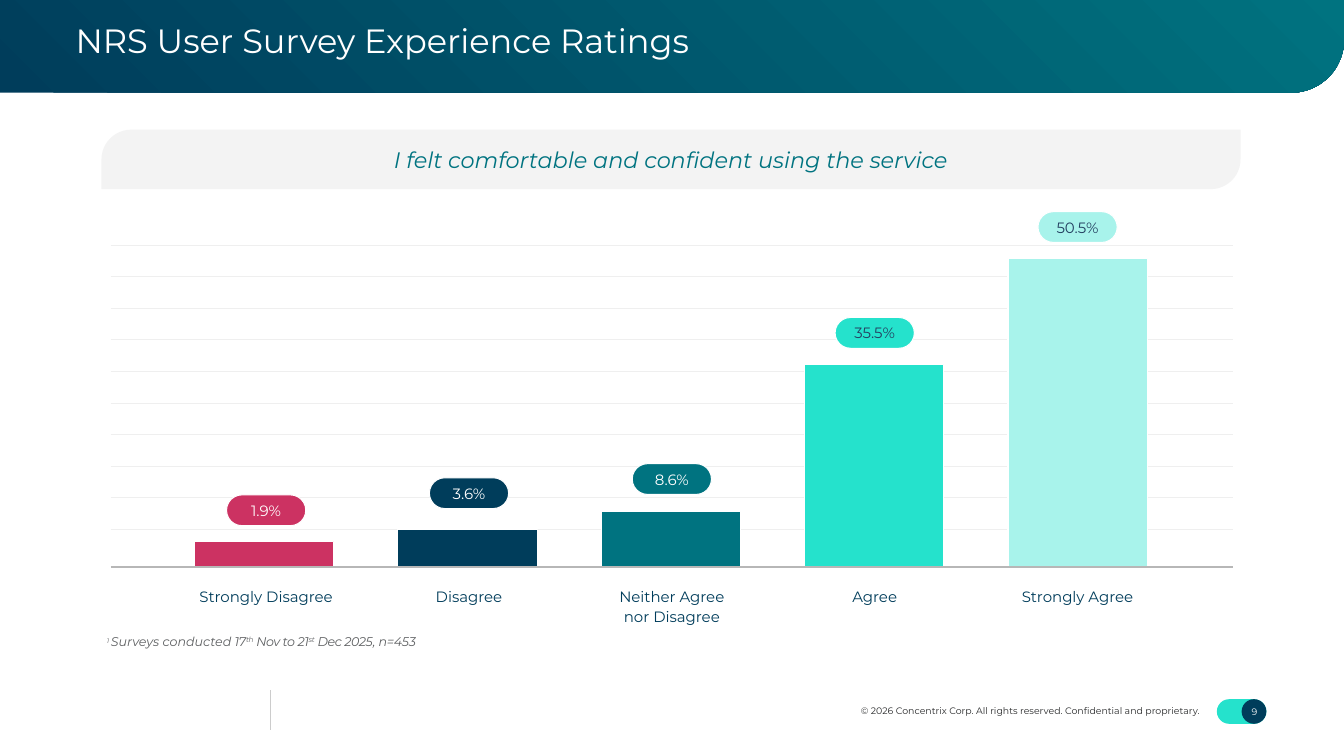
from pptx import Presentation
from pptx import util as u
from pptx.dml.color import RGBColor
from pptx.enum import shapes, text
from pptx.oxml.ns import qn
from lxml import etree

Pt = u.Pt
SHAPE = shapes.MSO_SHAPE
ALIGN = text.PP_ALIGN
ANCHOR = text.MSO_ANCHOR

FONT = "Montserrat"
WHITE = RGBColor(0xFF, 0xFF, 0xFF)
NAVY = RGBColor(0x00, 0x3D, 0x5B)
TEAL = RGBColor(0x00, 0x73, 0x80)
TURQUOISE = RGBColor(0x25, 0xE2, 0xCC)
AQUA = RGBColor(0xA8, 0xF3, 0xEB)
CRIMSON = RGBColor(0xCC, 0x32, 0x62)
SLATE = RGBColor(0x24, 0x40, 0x61)
PANEL = RGBColor(0xF3, 0xF3, 0xF3)
GRID = RGBColor(0xEF, 0xEF, 0xEF)
AXIS = RGBColor(0xB7, 0xB7, 0xB7)
DIVIDER = RGBColor(0xCC, 0xCC, 0xCC)
INK = RGBColor(0x2A, 0x2B, 0x2C)
GREY = RGBColor(0x5E, 0x60, 0x62)

# Label, value, bar height, pill top, fill, pill text colour
RATINGS = [
    ("Strongly Disagree", "1.9%", 18.7, 353.5, CRIMSON, WHITE),
    ("Disagree", "3.6%", 27.2, 341.3, NAVY, WHITE),
    ("Neither Agree\nnor Disagree", "8.6%", 39.6, 331.2, TEAL, WHITE),
    ("Agree", "35.5%", 144.7, 226.8, TURQUOISE, SLATE),
    ("Strongly Agree", "50.5%", 220.5, 151.2, AQUA, SLATE),
]
BASELINE = 405.2
PLOT_LEFT, PLOT_RIGHT = 79.3, 880.6
BAR_LEFT, BAR_PITCH, BAR_WIDTH = 139, 145.25, 99.4
LABEL_LEFT, LABEL_PITCH = 140.4, 144.9
PILL_WIDTH, PILL_HEIGHT = 56.6, 22


def add_run(p, content, size, color, italic=False, baseline=0, spacing=0):
    r = p.add_run()
    r.text = content
    f = r.font
    f.name, f.size, f.italic = FONT, Pt(size), italic
    f.color.rgb = color
    rPr = r._r.get_or_add_rPr()
    if baseline:
        rPr.set("baseline", str(baseline * 1000))
    if spacing:
        rPr.set("spc", str(round(spacing * 100)))


def write(sp, content, size, color, align=ALIGN.LEFT, anchor=ANCHOR.MIDDLE,
          insets=(0, 0, 0, 0), italic=False, line_spacing=None, grow=False):
    """Fill a shape with one paragraph; newlines become line breaks."""
    tf = sp.text_frame
    tf.word_wrap = True
    tf.vertical_anchor = anchor
    tf.margin_left, tf.margin_top, tf.margin_right, tf.margin_bottom = map(Pt, insets)
    if grow:
        tf.auto_size = text.MSO_AUTO_SIZE.SHAPE_TO_FIT_TEXT
    p = tf.paragraphs[0]
    p.alignment = align
    if line_spacing:
        p.line_spacing = line_spacing
    for i, row in enumerate(content.split("\n")):
        if i:
            p.add_line_break()
        if row:
            add_run(p, row, size, color, italic)
    return p


def add_box(s, x, y, w, h):
    return s.shapes.add_textbox(Pt(x), Pt(y), Pt(w), Pt(h))


def add_block(s, kind, x, y, w, h, fill=None, line=None, adjust=()):
    sp = s.shapes.add_shape(kind, Pt(x), Pt(y), Pt(w), Pt(h))
    sp.shadow.inherit = False
    for i, value in enumerate(adjust):
        sp.adjustments[i] = value
    if fill is not None:
        sp.fill.solid()
        sp.fill.fore_color.rgb = fill
    if line is None:
        sp.line.fill.background()
    else:
        sp.line.color.rgb = line
        sp.line.width = Pt(0.75)
    return sp


def add_line(s, x1, y1, x2, y2, color, width=0.75):
    c = s.shapes.add_connector(shapes.MSO_CONNECTOR.STRAIGHT,
                               Pt(x1), Pt(y1), Pt(x2), Pt(y2))
    c.line.color.rgb = color
    c.line.width = Pt(width)
    etree.SubElement(c._element.spPr, qn("a:effectLst"))


def add_footer(s):
    add_block(s, SHAPE.ROUNDED_RECTANGLE, 869.2, 499.4, 35.4, 17.6, TURQUOISE, adjust=[0.5])
    add_block(s, SHAPE.OVAL, 886.9, 499.4, 17.7, 17.6, NAVY)
    write(add_box(s, 883.4, 495.4, 25.2, 25.9), "9", 6.7, WHITE, ALIGN.CENTER)
    write(add_box(s, 494.6, 504, 362.9, 8),
          "© 2026 Concentrix Corp. All rights reserved. Confidential and proprietary.",
          6.7, INK, ALIGN.RIGHT, grow=True)
    add_line(s, 193, 493, 193, 521.5, DIVIDER)


def add_header(s):
    band = add_block(s, SHAPE.ROUND_1_RECTANGLE, 0, -9.4, 960, 75.6, adjust=[0.5])
    band.rotation = 180
    band._element.spPr.get_or_add_xfrm().set("flipH", "1")
    band.fill.gradient()
    band.fill.gradient_angle = 315
    for stop, position, color in zip(band.fill.gradient_stops, (0, 1), (NAVY, TEAL)):
        stop.position = position
        stop.color.rgb = color
    write(add_box(s, 54, 4.3, 702.7, 48.2), "NRS User Survey Experience Ratings",
          24, WHITE, anchor=ANCHOR.TOP, insets=(0, 9.6, 9.6, 9.6), grow=True)


def add_rating(s, i, label, value, height, pill_top, fill, color):
    add_block(s, SHAPE.RECTANGLE, BAR_LEFT + i * BAR_PITCH, BASELINE - height,
              BAR_WIDTH, height, fill, WHITE)
    x = LABEL_LEFT + i * LABEL_PITCH
    label_height = 29.5 + 14.4 * label.count("\n")
    write(add_box(s, x, 412.6, BAR_WIDTH, label_height), label, 10.7, NAVY,
          ALIGN.CENTER, insets=(0, 6, 0, 9.6), line_spacing=1.1, grow=True)
    pill = add_block(s, SHAPE.ROUNDED_RECTANGLE, x + (BAR_WIDTH - PILL_WIDTH) / 2, pill_top,
                     PILL_WIDTH, PILL_HEIGHT, fill, WHITE, [0.5])
    write(pill, value, 10.7, color, ALIGN.CENTER, insets=(0, 9.6, 0, 9.6))


def add_footnote(s):
    p = write(add_box(s, 73.4, 452.2, 455.8, 12.2), "", 9, GREY,
              anchor=ANCHOR.TOP, insets=(0, 0.7, 0, 0), grow=True)
    p._p.get_or_add_pPr().set("marL", str(Pt(2.9)))
    parts = [("1 ", 8, 28, 0), ("Surveys conducted ", 9, 0, 0), ("17", 9, 0, -0.3),
             ("th", 9, 30, -0.3), (" Nov to 21", 9, 0, -0.3), ("st", 9, 30, -0.3),
             (" Dec 2025", 9, 0, -0.3), (", ", 9, 0, 0), ("n=453", 9, 0, -0.2)]
    for content, size, baseline, spacing in parts:
        add_run(p, content, size, GREY, True, baseline, spacing)


def main():
    prs = Presentation()
    prs.slide_width, prs.slide_height = Pt(960), Pt(540)
    s = prs.slides.add_slide(prs.slide_layouts[6])

    add_footer(s)
    add_header(s)

    # Gridlines
    for i in range(10):
        y = 175.2 + 22.55 * i
        add_line(s, PLOT_LEFT, y, PLOT_RIGHT, y, GRID)

    # Survey statement
    statement = add_block(s, SHAPE.ROUND_2_DIAG_RECTANGLE, 72.5, 92.6, 813.6, 42.5,
                          PANEL, adjust=[0.5, 0])
    write(statement, "I felt comfortable and confident using the service", 16, TEAL,
          ALIGN.CENTER, insets=(9.6,) * 4, italic=True)

    # Bars with labels and values, then the axis over their feet
    for i, rating in enumerate(RATINGS):
        add_rating(s, i, *rating)
    add_line(s, PLOT_LEFT, BASELINE, PLOT_RIGHT, BASELINE, AXIS, 1.5)

    add_footnote(s)
    prs.save("out.pptx")


if __name__ == "__main__":
    main()
